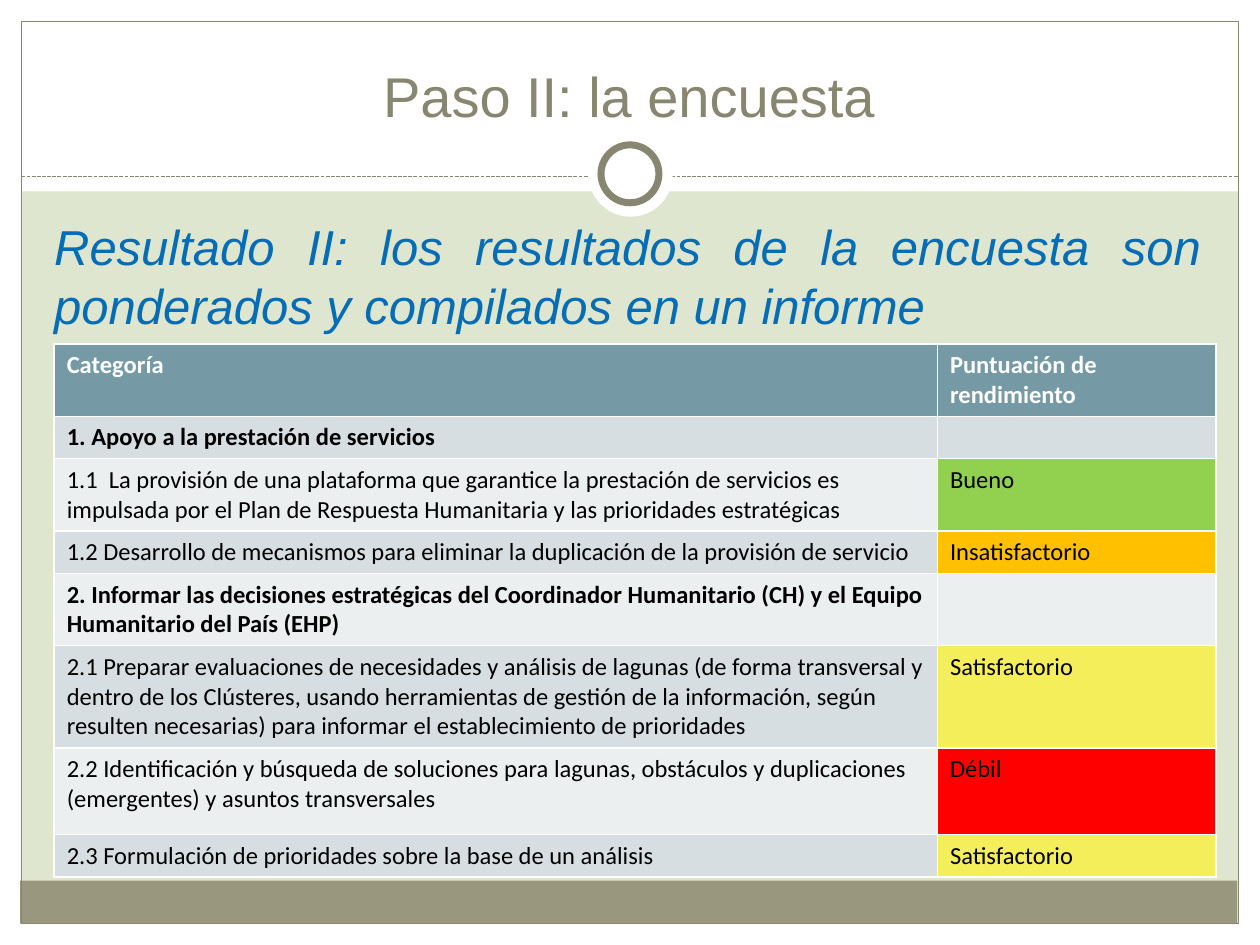
from lxml.etree import SubElement
from pptx import Presentation
from pptx.dml.color import RGBColor
from pptx.enum.dml import MSO_LINE
from pptx.enum.shapes import MSO_CONNECTOR, MSO_SHAPE
from pptx.enum.text import MSO_ANCHOR, PP_ALIGN
from pptx.oxml.ns import qn
from pptx.util import Inches, Pt

WHITE = RGBColor(0xFF, 0xFF, 0xFF)
BLACK = RGBColor(0x00, 0x00, 0x00)
SAGE = RGBColor(0xDF, 0xE6, 0xD0)
OLIVE = RGBColor(0x87, 0x86, 0x70)
KHAKI = RGBColor(0x99, 0x98, 0x7F)
BLUE = RGBColor(0x05, 0x6C, 0xB6)
HEADER = RGBColor(0x75, 0x9A, 0xA5)
BANDS = (RGBColor(0xD6, 0xDE, 0xE1), RGBColor(0xEC, 0xEF, 0xF0))
RATINGS = {
    "Bueno": RGBColor(0x92, 0xD0, 0x50),
    "Insatisfactorio": RGBColor(0xFF, 0xC0, 0x00),
    "Satisfactorio": RGBColor(0xF5, 0xEE, 0x5B),
    "Débil": RGBColor(0xFF, 0x00, 0x00),
}

# Category, rating, row height; rows without a rating are section headings
HEADINGS = ("Categoría", "Puntuación de rendimiento", 0.52)
ROWS = [
    ("1. Apoyo a la prestación de servicios", "", 0.3),
    ("1.1  La provisión de una plataforma que garantice la prestación de servicios es "
     "impulsada por el Plan de Respuesta Humanitaria y las prioridades estratégicas",
     "Bueno", 0.52),
    ("1.2 Desarrollo de mecanismos para eliminar la duplicación de la provisión de servicio",
     "Insatisfactorio", 0.3),
    ("2. Informar las decisiones estratégicas del Coordinador Humanitario (CH) y el Equipo "
     "Humanitario del País (EHP)", "", 0.52),
    ("2.1 Preparar evaluaciones de necesidades y análisis de lagunas (de forma transversal y "
     "dentro de los Clústeres, usando herramientas de gestión de la información, según "
     "resulten necesarias) para informar el establecimiento de prioridades",
     "Satisfactorio", 0.73),
    ("2.2 Identificación y búsqueda de soluciones para lagunas, obstáculos y duplicaciones "
     "(emergentes) y asuntos transversales", "Débil", 0.69),
    ("2.3 Formulación de prioridades sobre la base de un análisis", "Satisfactorio", 0.3),
]


class SlideBuilder:
    text_font = "Arial"
    table_font = "Calibri"
    table_size = 14

    def __init__(self, slide):
        self.s = slide

    def background(self, color):
        fill = self.s.background.fill
        fill.solid()
        fill.fore_color.rgb = color

    def shape(self, kind, x, y, w, h, fill=None, line=None, width=0.75):
        sp = self.s.shapes.add_shape(kind, Inches(x), Inches(y), Inches(w), Inches(h))
        sp.shadow.inherit = False
        if fill is None:
            sp.fill.background()
        else:
            sp.fill.solid()
            sp.fill.fore_color.rgb = fill
        if line is None:
            sp.line.fill.background()
        else:
            sp.line.color.rgb = line
            sp.line.width = Pt(width)

    def dashed_line(self, x1, y1, x2, y2, color):
        c = self.s.shapes.add_connector(
            MSO_CONNECTOR.STRAIGHT, Inches(x1), Inches(y1), Inches(x2), Inches(y2))
        c.line.color.rgb = color
        c.line.width = Pt(0.75)
        c.line.dash_style = MSO_LINE.SQUARE_DOT
        SubElement(c._element.spPr, qn("a:effectLst"))

    def placeholder(self, idx, text, x, y, w, h, size, color, align, anchor, italic=False):
        sp = self.s.placeholders[idx]
        sp.left, sp.top, sp.width, sp.height = Inches(x), Inches(y), Inches(w), Inches(h)
        tf = sp.text_frame
        tf.text = text
        tf.vertical_anchor = anchor
        p = tf.paragraphs[0]
        p.alignment = align
        p.space_before = Pt(0)
        self.font(p, self.text_font, size, color, italic=italic)
        # No bullet and no hanging indent
        pPr = p._p.get_or_add_pPr()
        pPr.set("marL", "0")
        pPr.set("indent", "0")
        pPr.insert_element_before(pPr.makeelement(qn("a:buNone")), "a:defRPr")
        # Bring in front of the frame
        self.s.shapes._spTree.append(sp._element)

    def font(self, p, name, size, color, bold=False, italic=False):
        f = p.font
        f.name, f.size, f.bold, f.italic = name, Pt(size), bold, italic
        f.color.rgb = color

    def cell(self, cell, text, fill, color, bold):
        cell.fill.solid()
        cell.fill.fore_color.rgb = fill
        p = cell.text_frame.paragraphs[0]
        self.font(p, self.table_font, self.table_size, color, bold)
        if text:
            p.add_run().text = text
        else:
            # Keeps an empty cell from growing its row
            p._p.get_or_add_endParaRPr().set("sz", str(self.table_size * 100))

    def table(self, x, y, col_widths, headings, rows):
        records = [headings] + rows
        height = sum(r[2] for r in records)
        t = self.s.shapes.add_table(
            len(records), len(col_widths), Inches(x), Inches(y),
            Inches(sum(col_widths)), Inches(height)).table
        for col, w in zip(t.columns, col_widths):
            col.width = Inches(w)
        for i, (category, rating, h) in enumerate(records):
            t.rows[i].height = Inches(h)
            header = i == 0
            band = HEADER if header else BANDS[(i - 1) % 2]
            color = WHITE if header else BLACK
            self.cell(t.cell(i, 0), category, band, color, header or not rating)
            self.cell(t.cell(i, 1), rating, RATINGS.get(rating, band), color, header)


def main():
    prs = Presentation()
    prs.slide_width, prs.slide_height = Inches(10), Inches(7.5)
    b = SlideBuilder(prs.slides.add_slide(prs.slide_layouts[1]))
    b.background(SAGE)

    # White margins and title band
    for box in ((0, 7.33, 10, 0.17), (0, 0, 10, 1.52), (0, 0, 0.17, 7.5), (9.83, 0, 0.17, 7.5)):
        b.shape(MSO_SHAPE.RECTANGLE, *box, fill=WHITE)

    # Footer bar, frame and divider with ring
    b.shape(MSO_SHAPE.RECTANGLE, 0.16, 6.99, 9.66, 0.34, fill=KHAKI)
    b.shape(MSO_SHAPE.RECTANGLE, 0.17, 0.17, 9.66, 7.16, line=OLIVE)
    b.dashed_line(0.17, 1.4, 9.83, 1.4, OLIVE)
    b.shape(MSO_SHAPE.OVAL, 4.67, 1.05, 0.67, 0.67, fill=WHITE)
    b.shape(MSO_SHAPE.OVAL, 4.77, 1.15, 0.46, 0.46, fill=WHITE, line=OLIVE, width=4)

    # Title and statement
    b.placeholder(0, "Paso II: la encuesta", 0.33, 0.36, 9.33, 0.71, 32, OLIVE,
                  PP_ALIGN.CENTER, MSO_ANCHOR.BOTTOM)
    b.placeholder(1, "Resultado II: los resultados de la encuesta son ponderados y "
                  "compilados en un informe", 0.33, 1.67, 9.3, 5, 28, BLUE,
                  PP_ALIGN.JUSTIFY, MSO_ANCHOR.TOP, italic=True)

    # Survey scores
    b.table(0.43, 2.73, (7.01, 2.21), HEADINGS, ROWS)

    prs.save("out.pptx")


if __name__ == "__main__":
    main()
